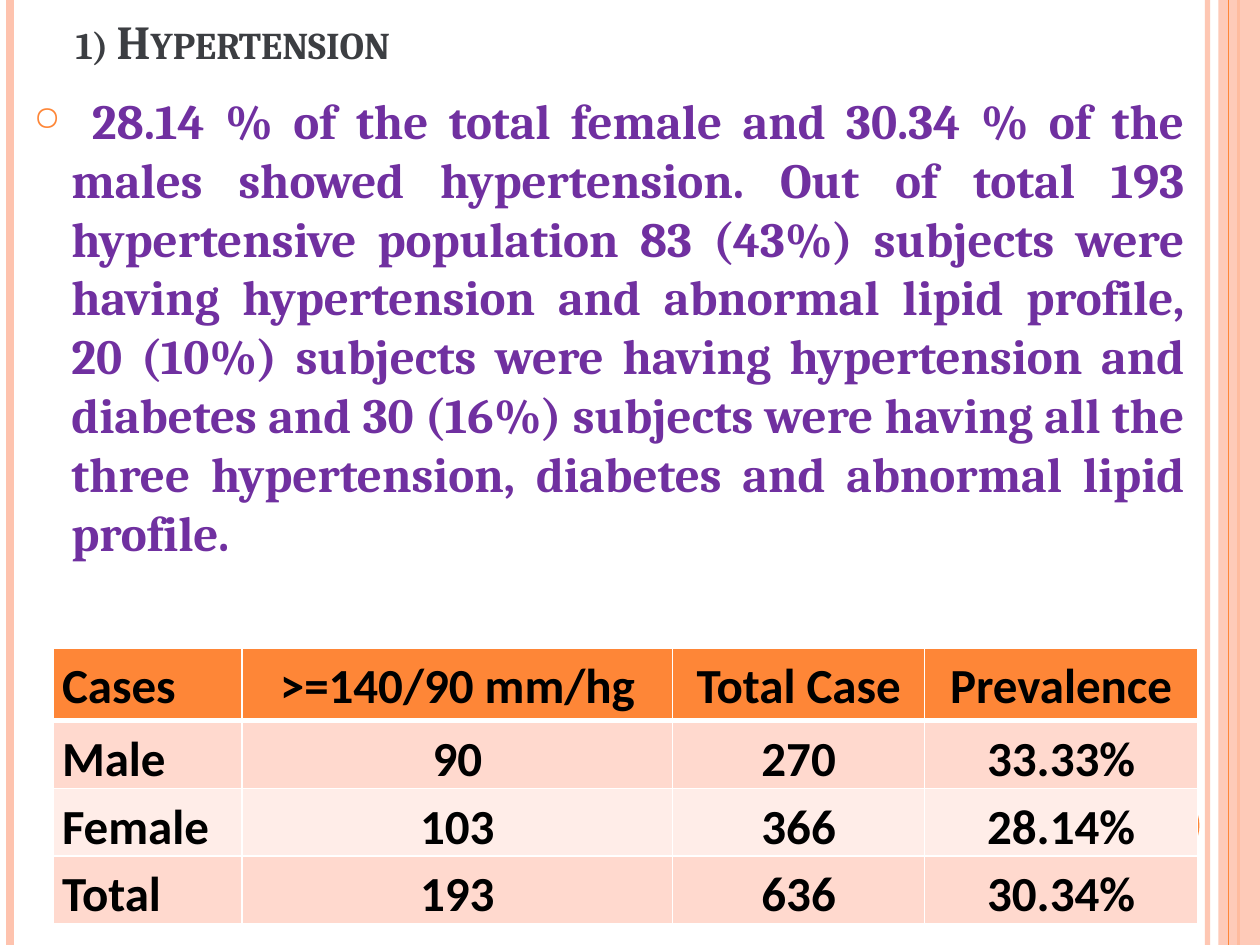
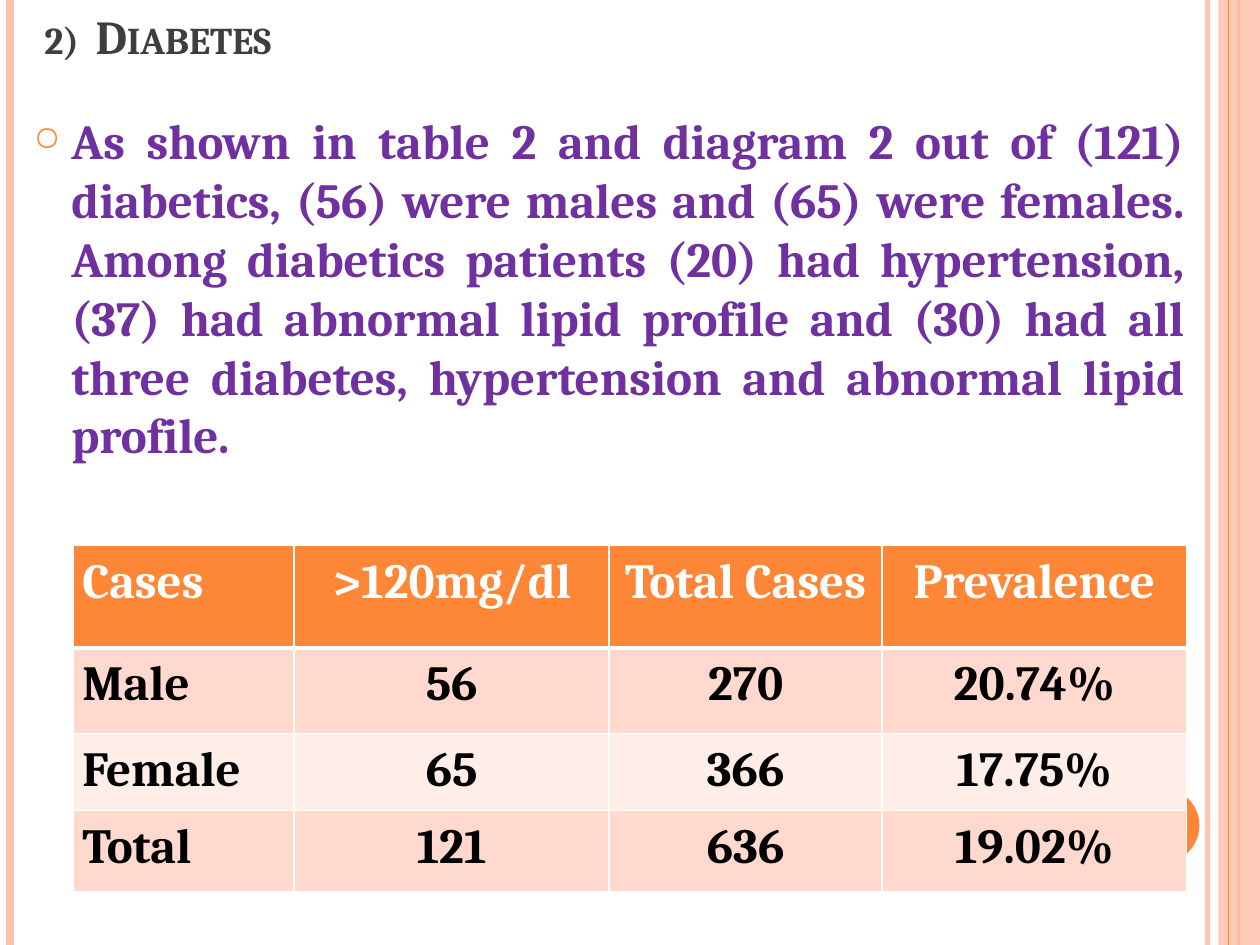
import lxml.etree
import pptx
import pptx.dml.color
import pptx.enum.shapes
import pptx.enum.text
import pptx.oxml
import pptx.oxml.ns
import pptx.util

Cm = pptx.util.Cm
Pt = pptx.util.Pt
ALIGN = pptx.enum.text.PP_ALIGN

WIDTH, HEIGHT = 25.4, 19.05
ORANGE = "FE8637"
PEACH = "FEC3AE"
WHITE = "FFFFFF"
BLACK = "000000"
TITLE_GREY = "3C3E42"
PURPLE = "7030A0"
ROW_TINTS = ("FFD9CE", "FFEDE8")
TEXT_FONT = "Cambria"

SLIDES = [
    {
        "title": "1) Hypertension",
        "title_box": (1.27, 1.07, 22.86, 1.57),
        "body": " 28.14 % of the total female and 30.34 % of the males showed "
                "hypertension. Out of total 193 hypertensive population 83 (43%) "
                "subjects were having hypertension and abnormal lipid profile, "
                "20 (10%) subjects were having hypertension and diabetes and "
                "30 (16%) subjects were having all the three hypertension, "
                "diabetes and abnormal lipid profile.",
        "body_box": (0.43, 1.7, 23.7, 11.23),
        "table": {
            "origin": (1.07, 13.06),
            "widths": (3.81, 8.68, 5.08, 5.5),
            "heights": (1.47, 1.27, 1.27, 1.27),
            "font": "Calibri",
            "header_colour": BLACK,
            "rows": [
                ("Cases", ">=140/90 mm/hg", "Total Case", "Prevalence"),
                ("Male", "90", "270", "33.33%"),
                ("Female", "103", "366", "28.14%"),
                ("Total", "193", "636", "30.34%"),
            ],
        },
    },
    {
        "title": "2)  Diabetes",
        "title_box": (0.64, 0.2, 22.86, 2.34),
        "body": "As shown in table 2 and diagram 2 out of (121) diabetics, (56) "
                "were males and (65) were females. Among diabetics patients (20) "
                "had hypertension, (37) had abnormal lipid profile and (30) had "
                "all three diabetes, hypertension and abnormal lipid profile.",
        "body_box": (0.43, 2.11, 23.7, 8.69),
        "table": {
            "origin": (1.48, 11.0),
            "widths": (4.45, 6.35, 5.5, 6.14),
            "heights": (2.06, 1.73, 1.55, 1.63),
            "font": TEXT_FONT,
            "header_colour": WHITE,
            "rows": [
                ("Cases", ">120mg/dl", "Total Cases", "Prevalence"),
                ("Male", "56", "270", "20.74%"),
                ("Female", "65", "366", "17.75%"),
                ("Total", "121", "636", "19.02%"),
            ],
        },
    },
]


def colour(hex_text):
    return pptx.dml.color.RGBColor.from_string(hex_text)


def apply(target, values):
    for name, value in values.items():
        setattr(target, name, value)


def add_xml(parent, tag, **attributes):
    element = lxml.etree.SubElement(parent, pptx.oxml.ns.qn(tag))
    for name, value in attributes.items():
        element.set(name, str(value))
    return element


def set_opacity(container, percent):
    for fill_colour in container.iter(pptx.oxml.ns.qn("a:srgbClr")):
        add_xml(fill_colour, "a:alpha", val=percent * 1000)


class SlideBuilder:
    def __init__(self, presentation):
        self.presentation = presentation
        self.slide = None

    def start(self):
        layout = self.presentation.slide_layouts[5]
        self.slide = self.presentation.slides.add_slide(layout)
        self.line(24.34, PEACH, 3, 93)
        self.line(0.2, PEACH, 4.5)
        self.line(24.97, ORANGE, 1.5)
        shapes = pptx.enum.shapes.MSO_SHAPE
        self.shape(shapes.RECTANGLE, (24.56, 0, 0.84, HEIGHT), PEACH, 87)
        self.line(24.77, ORANGE, 0.75)
        self.shape(shapes.OVAL, (22.66, 15.88, 1.52, 1.52), ORANGE)

    def line(self, x, line_colour, width, opacity=100):
        connector = self.slide.shapes.add_connector(
            pptx.enum.shapes.MSO_CONNECTOR.STRAIGHT, Cm(x), Cm(0), Cm(x), Cm(HEIGHT))
        connector.line.color.rgb = colour(line_colour)
        connector.line.width = Pt(width)
        properties = connector._element.spPr
        if opacity < 100:
            set_opacity(properties, opacity)
        add_xml(properties, "a:effectLst")

    def shape(self, preset, box, fill_colour, opacity=100):
        shape = self.slide.shapes.add_shape(preset, *map(Cm, box))
        shape.shadow.inherit = False
        shape.fill.solid()
        shape.fill.fore_color.rgb = colour(fill_colour)
        if opacity < 100:
            set_opacity(shape._element.spPr, opacity)
        shape.line.fill.background()

    def text(self, paragraph, text, font, size, text_colour, alignment):
        paragraph.alignment = alignment
        run = paragraph.add_run()
        run.text = text
        apply(run.font, {"name": font, "size": Pt(size), "bold": True})
        run.font.color.rgb = colour(text_colour)
        return run

    def title(self, text, box):
        title = self.slide.shapes.title
        apply(title, dict(zip(("left", "top", "width", "height"), map(Cm, box))))
        apply(title.text_frame, {
            "auto_size": pptx.enum.text.MSO_AUTO_SIZE.NONE,
            "vertical_anchor": pptx.enum.text.MSO_ANCHOR.BOTTOM,
            "margin_top": Cm(0),
            "margin_bottom": Cm(1.25),
        })
        run = self.text(title.text_frame.paragraphs[0], text, TEXT_FONT, 27,
                        TITLE_GREY, ALIGN.LEFT)
        run.font._element.set("cap", "small")

    def body(self, text, box):
        frame = self.slide.shapes.add_textbox(*map(Cm, box)).text_frame
        frame.word_wrap = True
        paragraph = frame.paragraphs[0]
        self.text(paragraph, text, TEXT_FONT, 28, PURPLE, ALIGN.JUSTIFY)
        paragraph.space_before = Pt(6)
        properties = paragraph._p.get_or_add_pPr()
        properties.set("marL", str(Cm(0.76)))
        properties.set("indent", str(-Cm(0.76)))
        add_xml(add_xml(properties, "a:buClr"), "a:srgbClr", val=ORANGE)
        add_xml(properties, "a:buSzPct", val=70000)
        add_xml(properties, "a:buChar", char="○")

    def table(self, origin, widths, heights, font, header_colour, rows):
        table = self.slide.shapes.add_table(
            len(rows), len(widths), *map(Cm, origin),
            Cm(sum(widths)), Cm(sum(heights))).table
        for column, width in zip(table.columns, widths):
            column.width = Cm(width)
        for row, height in zip(table.rows, heights):
            row.height = Cm(height)
        for row_index, values in enumerate(rows):
            header = row_index == 0
            fill_colour = ORANGE if header else ROW_TINTS[(row_index - 1) % 2]
            for column_index, value in enumerate(values):
                cell = table.cell(row_index, column_index)
                apply(cell, {"margin_left": Cm(0.18), "margin_right": Cm(0.18),
                             "margin_top": Cm(0), "margin_bottom": Cm(0)})
                self.borders(cell, top=3 if row_index == 1 else 1,
                             bottom=3 if header else 1)
                cell.fill.solid()
                cell.fill.fore_color.rgb = colour(fill_colour)
                paragraph = cell.text_frame.paragraphs[0]
                paragraph.line_spacing = 1.15
                self.text(paragraph, value, font, 28,
                          header_colour if header else BLACK,
                          ALIGN.CENTER if column_index else ALIGN.LEFT)

    def borders(self, cell, top, bottom):
        properties = cell._tc.get_or_add_tcPr()
        for side, width in (("L", 1), ("R", 1), ("T", top), ("B", bottom)):
            border = add_xml(properties, f"a:ln{side}", w=Pt(width))
            add_xml(add_xml(border, "a:solidFill"), "a:srgbClr", val=WHITE)


def main():
    presentation = pptx.Presentation()
    presentation.slide_width = Cm(WIDTH)
    presentation.slide_height = Cm(HEIGHT)
    builder = SlideBuilder(presentation)
    for content in SLIDES:
        builder.start()
        builder.title(content["title"], content["title_box"])
        builder.body(content["body"], content["body_box"])
        builder.table(**content["table"])
    presentation.save("out.pptx")


if __name__ == "__main__":
    main()
